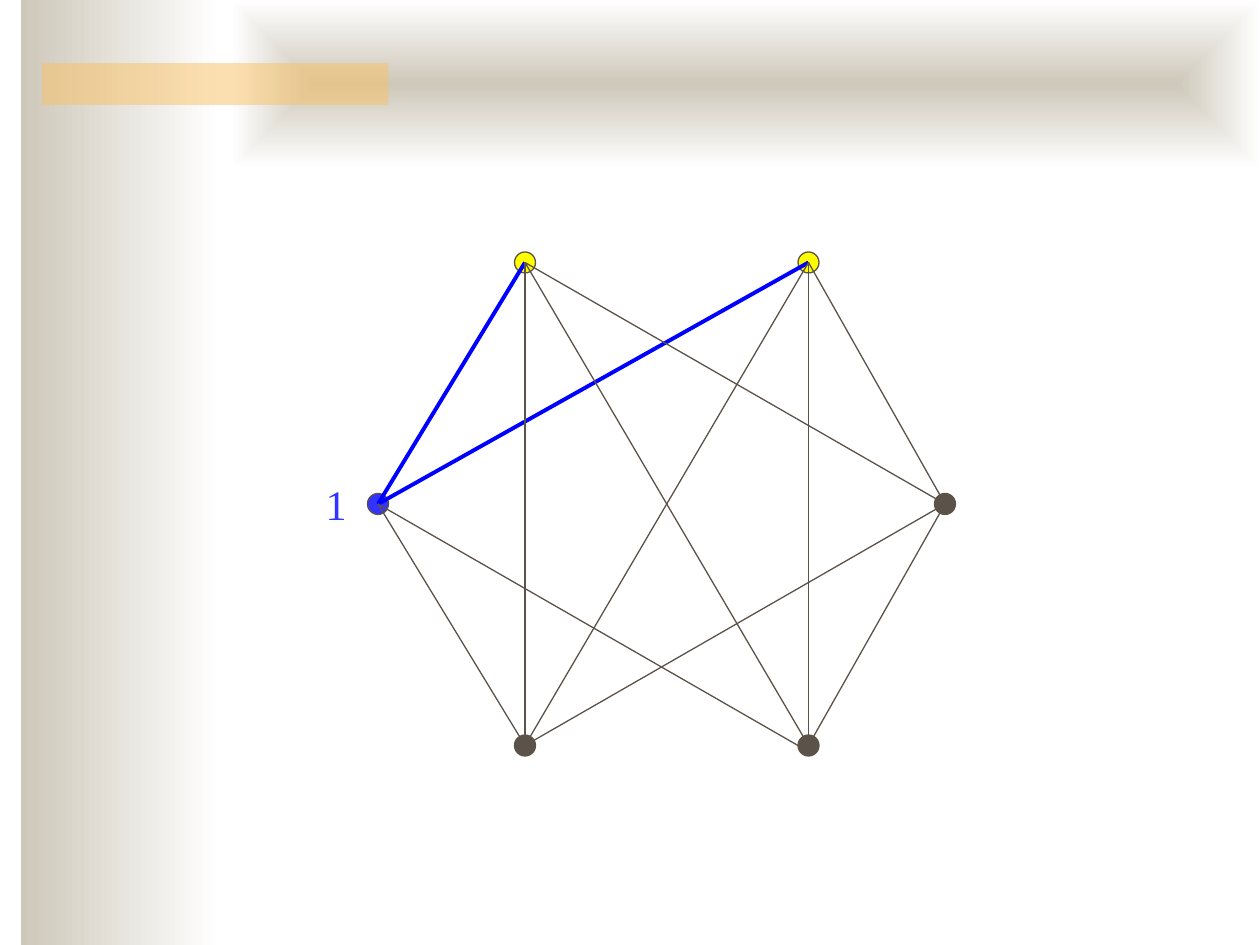
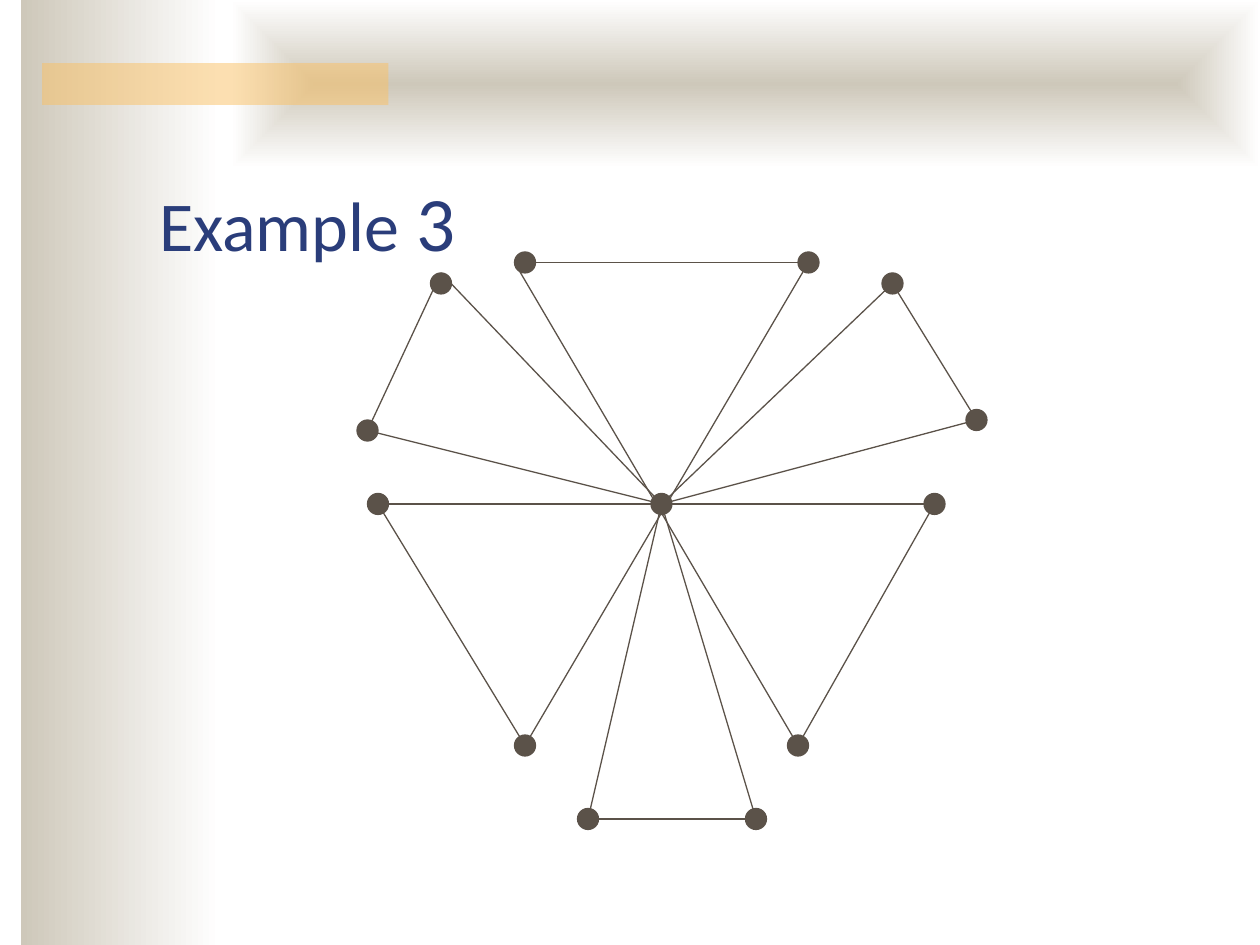
from lxml.etree import SubElement
from pptx import Presentation
from pptx.dml.color import RGBColor
from pptx.enum.shapes import MSO_CONNECTOR, MSO_SHAPE
from pptx.enum.text import MSO_ANCHOR, PP_ALIGN
from pptx.oxml.ns import qn
from pptx.util import Pt

SAND = RGBColor(0xCE, 0xC8, 0xBA)
WHITE = RGBColor(0xFF, 0xFF, 0xFF)
AMBER = RGBColor(0xFA, 0xC1, 0x64)
BROWN = RGBColor(0x5B, 0x52, 0x49)
NAVY = RGBColor(0x2A, 0x3D, 0x7A)
INDIGO = RGBColor(0x33, 0x33, 0xFF)
BLUE = RGBColor(0x00, 0x00, 0xFF)
YELLOW = RGBColor(0xFF, 0xFF, 0x00)

UNIT = 6  # grid step of the graphs, in points
NODE = 12  # node diameter


def add_shape(s, kind, x, y, w, h, fill=None, line=None):
    sp = s.shapes.add_shape(kind, Pt(x), Pt(y), Pt(w), Pt(h))
    sp.shadow.inherit = False
    if fill is not None:
        sp.fill.solid()
        sp.fill.fore_color.rgb = fill
    if line is None:
        sp.line.fill.background()
    else:
        sp.line.color.rgb = line
        sp.line.width = Pt(0.75)
    return sp


def add_gradient(s, x, y, w, h, from_centre=False):
    sp = add_shape(s, MSO_SHAPE.RECTANGLE, x, y, w, h)
    sp.fill.gradient()
    sp.fill.gradient_angle = 0
    for stop, position, color in zip(sp.fill.gradient_stops, (0, 1), (SAND, WHITE)):
        stop.position = position
        stop.color.rgb = color
    if from_centre:
        grad = sp._element.spPr.find(qn("a:gradFill"))
        grad.remove(grad.find(qn("a:lin")))
        path = SubElement(grad, qn("a:path"), {"path": "shape"})
        SubElement(path, qn("a:fillToRect"), dict.fromkeys("ltrb", "50000"))


def add_line(s, x1, y1, x2, y2, color=BROWN, width=0.75):
    line = s.shapes.add_connector(MSO_CONNECTOR.STRAIGHT, Pt(x1), Pt(y1), Pt(x2), Pt(y2))
    line.line.color.rgb = color
    line.line.width = Pt(width)
    SubElement(line._element.spPr, qn("a:effectLst"))


def add_text(s, x, y, w, h, runs, font, color, align=PP_ALIGN.LEFT,
             anchor=MSO_ANCHOR.TOP, wrap=True):
    """Place one paragraph made of (text, size) runs."""
    tf = s.shapes.add_textbox(Pt(x), Pt(y), Pt(w), Pt(h)).text_frame
    tf.word_wrap = wrap
    tf.vertical_anchor = anchor
    p = tf.paragraphs[0]
    p.alignment = align
    for text, size in runs:
        r = p.add_run()
        r.text = text
        r.font.name = font
        r.font.size = Pt(size)
        r.font.color.rgb = color


def add_background(s, w, h):
    # Side band, top band and translucent bar
    add_gradient(s, 12, 0, 114, h)
    add_gradient(s, 132, 0, w - 132, 96, from_centre=True)
    bar = add_shape(s, MSO_SHAPE.RECTANGLE, 24, 36, 198, 24, AMBER)
    color = bar._element.spPr.find(qn("a:solidFill"))[0]
    SubElement(color, qn("a:alpha"), {"val": "50000"})


def add_graph(s, x, y, nodes, edges, fills=None, strong=()):
    """Draw nodes and edges on a grid whose zero point is (x, y).

    An edge end is a node name or a grid point of its own.
    """
    def locate(end):
        col, row = nodes.get(end, end)
        return x + col * UNIT, y + row * UNIT

    for name in nodes:
        cx, cy = locate(name)
        fill = (fills or {}).get(name, BROWN)
        add_shape(s, MSO_SHAPE.OVAL, cx - NODE / 2, cy - NODE / 2, NODE, NODE, fill, BROWN)
    for start, end in strong:
        add_line(s, *locate(start), *locate(end), color=BLUE, width=2.25)
    for start, end in edges:
        add_line(s, *locate(start), *locate(end))


def build_coloring_slide(s, x, y):
    # Six nodes, each joined to all but one of the others
    nodes = {"top left": (14, 0), "top right": (41, 0), "right": (54, 23),
             "bottom right": (41, 46), "bottom left": (14, 46), "left": (0, 23)}
    edges = [("left", (40, 46)), ("left", "bottom left"),
             ("top right", "right"), ("top right", "bottom right"),
             ("top left", "bottom left"), ("right", "bottom right"),
             ("top left", "right"), ("bottom left", "right"),
             ("top left", "bottom right"), ("bottom left", "top right")]
    fills = {"left": INDIGO, "top left": YELLOW, "top right": YELLOW}
    add_graph(s, x, y, nodes, edges, fills,
              strong=[("left", "top left"), ("left", "top right")])
    # Label of the first node
    add_text(s, x - 37.5, y + 120, 27, 36, [("1", 24)], "Times New Roman", INDIGO,
             align=PP_ALIGN.CENTER, wrap=False)


def build_windmill_slide(s, x, y):
    # Six triangles that meet in the hub
    nodes = {"hub": (28, 23),
             "top left": (15, 0), "top right": (42, 0),
             "left": (1, 23), "bottom left": (15, 46),
             "right": (54, 23), "bottom right": (41, 46),
             "upper right": (50, 2), "far right": (58, 15),
             "low left": (21, 53), "low right": (37, 53),
             "far left": (0, 16), "upper left": (7, 2)}
    upper_left_tip = (7, 1)
    # Edges that run straight through the hub, then the outer sides
    edges = [("left", (55, 23)), ((14, 0), "bottom right"), ("top right", "bottom left"),
             ("left", "bottom left"), ("right", "bottom right"), ("top left", "top right")]
    # Triangles with two spokes of their own
    for a, b in [("upper right", "far right"), ("low left", "low right"),
                 ("far left", upper_left_tip)]:
        edges += [("hub", a), ("hub", b), (a, b)]
    add_graph(s, x, y, nodes, edges)
    # Title
    add_text(s, x - 126, y - 84, 612, 90, [("Example", 40), (" 3", 44)], "Calibri", NAVY,
             anchor=MSO_ANCHOR.BOTTOM)


def main():
    prs = Presentation()
    prs.slide_width, prs.slide_height = Pt(720), Pt(540)
    for build, x, y in [(build_coloring_slide, 216, 150), (build_windmill_slide, 210, 150)]:
        s = prs.slides.add_slide(prs.slide_layouts[6])
        add_background(s, 720, 540)
        build(s, x, y)
    prs.save("out.pptx")


if __name__ == "__main__":
    main()
